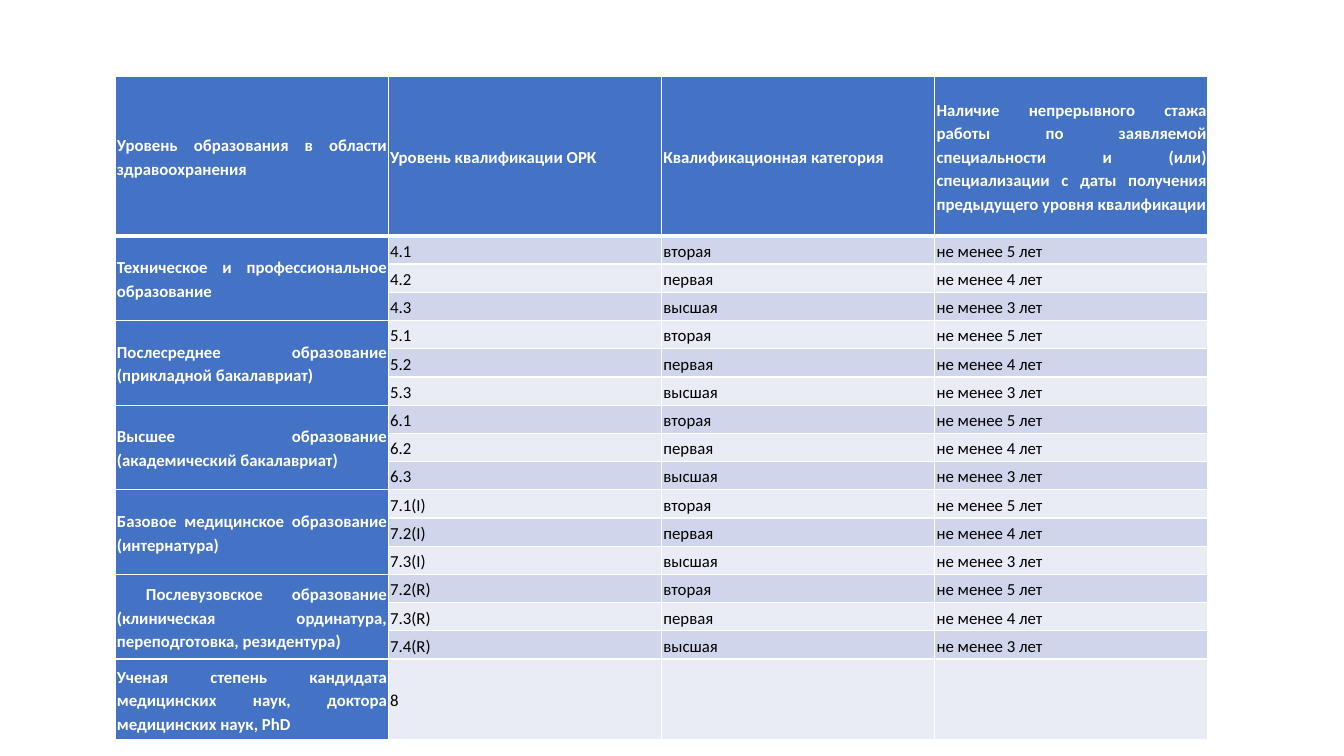
from lxml import etree
from pptx import Presentation
from pptx.dml.color import RGBColor
from pptx.enum.text import MSO_ANCHOR, PP_ALIGN
from pptx.oxml.ns import qn
from pptx.util import Inches, Pt

MIDDLE = MSO_ANCHOR.MIDDLE
JUSTIFY = PP_ALIGN.JUSTIFY
FONT = "Calibri"
COLORS = {
    "heading": "4472C4",
    "odd_row": "CFD5EA",
    "even_row": "E9EBF5",
    "border": "FFFFFF",
    "heading_text": "FFFFFF",
    "body_text": "000000",
}

HEADINGS = [
    "Уровень образования в области здравоохранения",
    "Уровень квалификации ОРК",
    "Квалификационная категория",
    "Наличие непрерывного стажа работы по заявляемой специальности и (или) "
    "специализации с даты получения предыдущего уровня квалификации",
]
# Each education level covers one row per qualification level
EDUCATION_LEVELS = [
    ("Техническое и профессиональное образование", ["4.1", "4.2", "4.3"]),
    ("Послесреднее образование (прикладной бакалавриат)", ["5.1", "5.2", "5.3"]),
    ("Высшее образование (академический бакалавриат)", ["6.1", "6.2", "6.3"]),
    ("Базовое медицинское образование (интернатура)", ["7.1(I)", "7.2(I)", "7.3(I)"]),
    (" Послевузовское образование (клиническая ординатура, переподготовка, резидентура) ",
     ["7.2(R)", "7.3(R)", "7.4(R)"]),
]
CATEGORIES = [
    ("вторая", "не менее 5 лет"),
    ("первая", "не менее 4 лет"),
    ("высшая", "не менее 3 лет"),
]
DEGREE = ["Ученая степень кандидата медицинских наук, доктора медицинских наук, PhD",
          "8", "", ""]

COLUMN_WIDTH = 2.71
HEADING_HEIGHT, LEVEL_HEIGHT, DEGREE_HEIGHT = 1.58, 0.28, 0.8


def table_rows():
    """Return the text of every row, with None where a merged cell continues."""
    rows = [HEADINGS]
    for education, levels in EDUCATION_LEVELS:
        for i, (level, (category, experience)) in enumerate(zip(levels, CATEGORIES)):
            rows.append([None if i else education, level, category, experience])
    return rows + [DEGREE]


def set_borders(cell, top, bottom):
    properties = cell._tc.get_or_add_tcPr()
    for side, width in (("L", 1), ("R", 1), ("T", top), ("B", bottom)):
        line = etree.SubElement(properties, qn(f"a:ln{side}"), w=str(Pt(width)))
        fill = etree.SubElement(line, qn("a:solidFill"))
        etree.SubElement(fill, qn("a:srgbClr"), val=COLORS["border"])


def write_text(cell, text, is_heading):
    paragraph = cell.text_frame.paragraphs[0]
    paragraph.text = text
    paragraph.alignment = JUSTIFY
    paragraph.line_spacing = 1.15
    paragraph.space_after = Pt(1)
    paragraph._p.get_or_add_pPr().set("marL", str(Inches(0.01)))
    font = paragraph.font
    font.name, font.size, font.bold = FONT, Pt(12), is_heading
    color = COLORS["heading_text" if is_heading else "body_text"]
    font.color.rgb = RGBColor.from_string(color)


def style_cell(cell, row, column):
    is_heading = row == 0 or column == 0
    set_borders(cell, top=3 if row == 1 else 1, bottom=3 if row == 0 else 1)
    band = "odd_row" if row % 2 else "even_row"
    cell.fill.solid()
    cell.fill.fore_color.rgb = RGBColor.from_string(COLORS["heading" if is_heading else band])
    cell.vertical_anchor = MIDDLE
    cell.margin_left = cell.margin_right = Inches(0.01)
    cell.margin_top = cell.margin_bottom = Inches(0.01)
    return is_heading


def add_qualification_table(slide):
    rows = table_rows()
    heights = [HEADING_HEIGHT] + [LEVEL_HEIGHT] * (len(rows) - 2) + [DEGREE_HEIGHT]
    table = slide.shapes.add_table(
        len(rows), len(HEADINGS), Inches(1.14), Inches(0.76),
        Inches(COLUMN_WIDTH * len(HEADINGS)), Inches(sum(heights))).table
    table.horz_banding = False
    for column in table.columns:
        column.width = Inches(COLUMN_WIDTH)
    for row, height in zip(table.rows, heights):
        row.height = Inches(height)

    # Cell styles and text
    for r, texts in enumerate(rows):
        for c, text in enumerate(texts):
            is_heading = style_cell(table.cell(r, c), r, c)
            if text:
                write_text(table.cell(r, c), text, is_heading)

    # Education levels span their rows
    span = len(CATEGORIES)
    for i in range(len(EDUCATION_LEVELS)):
        first = 1 + i * span
        table.cell(first, 0).merge(table.cell(first + span - 1, 0))


def main():
    presentation = Presentation()
    presentation.slide_width = Inches(13.33)
    presentation.slide_height = Inches(7.5)
    slide = presentation.slides.add_slide(presentation.slide_layouts[6])
    add_qualification_table(slide)
    presentation.save("out.pptx")


if __name__ == "__main__":
    main()
